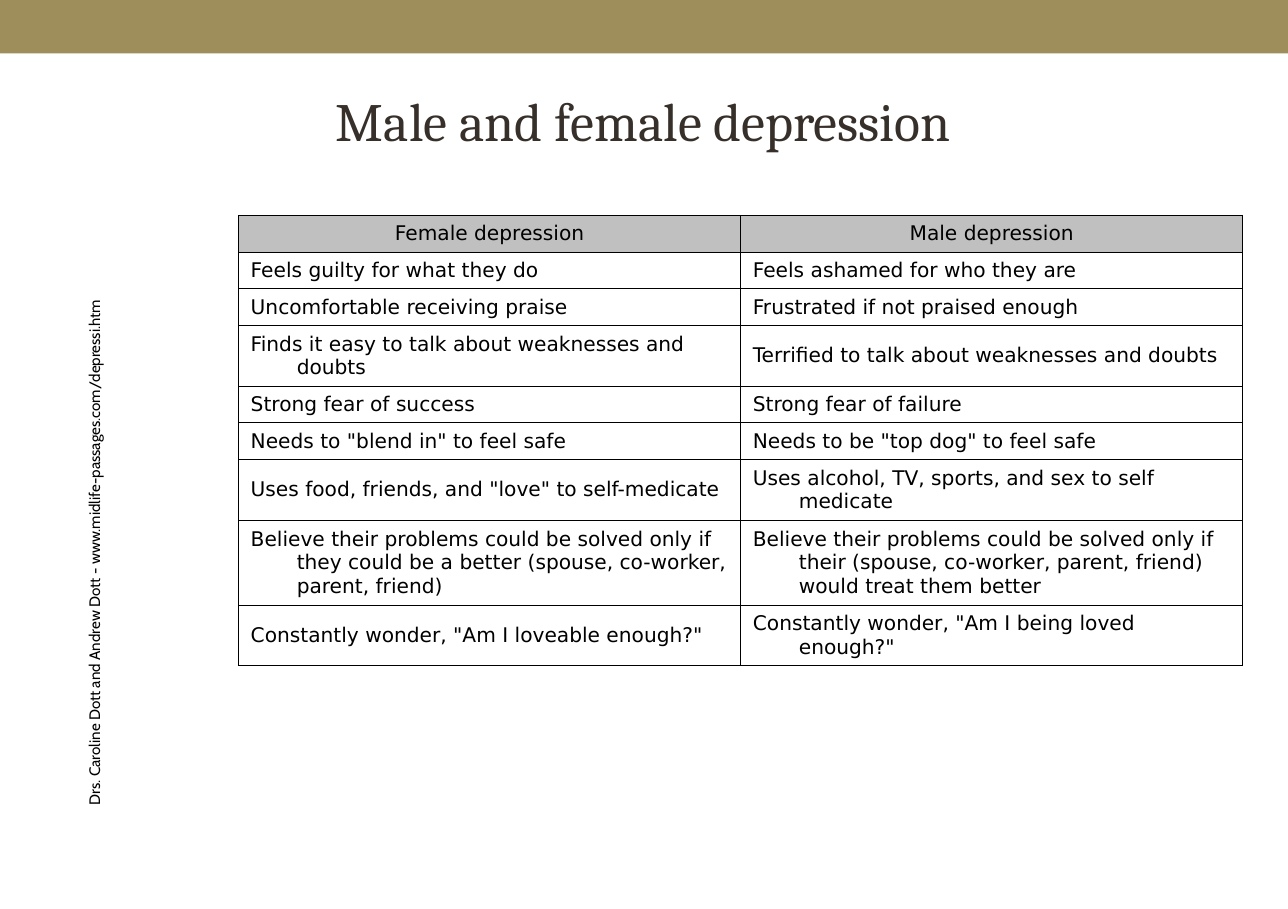
from lxml import etree
from pptx import Presentation
from pptx.dml.color import RGBColor
from pptx.enum.shapes import MSO_SHAPE
from pptx.enum.text import MSO_ANCHOR, PP_ALIGN
from pptx.oxml.ns import qn
from pptx.util import Pt

RECTANGLE = MSO_SHAPE.RECTANGLE
MIDDLE, TOP = MSO_ANCHOR.MIDDLE, MSO_ANCHOR.TOP
LEFT, CENTER = PP_ALIGN.LEFT, PP_ALIGN.CENTER

OLIVE = RGBColor(0x9E, 0x8E, 0x5C)
BROWN = RGBColor(0x37, 0x30, 0x2A)
BLACK = RGBColor(0, 0, 0)
SILVER = RGBColor(0xC0, 0xC0, 0xC0)

PAGE_WIDTH, PAGE_HEIGHT = 765.36, 540
TITLE_FORMAT = {"name": "Cambria", "size": Pt(32), "color": BROWN}
CELL_FORMAT = {"name": "DejaVu Sans", "size": Pt(12), "color": BLACK}
SOURCE_FORMAT = {"name": "Cabin", "size": Pt(9), "color": BLACK}

HANGING_INDENT = Pt(27.36)
BORDER_WIDTH = Pt(0.75)
ONE_LINE_ROW, EXTRA_LINE = 21.8, 14.2

# Each row: female side, male side, number of text lines it needs
COMPARISON = [
    ("Female depression", "Male depression", 1),
    ("Feels guilty for what they do", "Feels ashamed for who they are", 1),
    ("Uncomfortable receiving praise", "Frustrated if not praised enough", 1),
    ("Finds it easy to talk about weaknesses and doubts",
     "Terrified to talk about weaknesses and doubts", 2),
    ("Strong fear of success", "Strong fear of failure", 1),
    ('Needs to "blend in" to feel safe', 'Needs to be "top dog" to feel safe', 1),
    ('Uses food, friends, and "love" to self-medicate',
     "Uses alcohol, TV, sports, and sex to self medicate", 2),
    ("Believe their problems could be solved only if they could be a better "
     "(spouse, co-worker, parent, friend)",
     "Believe their problems could be solved only if their "
     "(spouse, co-worker, parent, friend) would treat them better", 3),
    ('Constantly wonder, "Am I loveable enough?"',
     'Constantly wonder, "Am I being loved enough?"', 2),
]


def write(para, text, text_format, alignment):
    para.alignment = alignment
    span = para.add_run()
    span.text = text
    for attribute, value in text_format.items():
        if attribute == "color":
            span.font.color.rgb = value
        else:
            setattr(span.font, attribute, value)


def add_text(page, box, text, text_format, alignment, anchor):
    shape = page.shapes.add_textbox(*map(Pt, box))
    shape.text_frame.word_wrap = True
    shape.text_frame.vertical_anchor = anchor
    write(shape.text_frame.paragraphs[0], text, text_format, alignment)
    return shape


def add_band(page, box):
    band = page.shapes.add_shape(RECTANGLE, *map(Pt, box))
    band.shadow.inherit = False
    band.fill.solid()
    band.fill.fore_color.rgb = OLIVE
    band.line.fill.background()


def add_source(page, box):
    """Write the source upwards, filling the given tall box."""
    left, top, width, height = box
    turned_box = (left + (width - height) / 2, top + (height - width) / 2, height, width)
    source = add_text(
        page, turned_box,
        "Drs. Caroline Dott and Andrew Dott - www.midlife-passages.com/depressi.htm",
        SOURCE_FORMAT, LEFT, TOP)
    source.rotation = 270


def add_borders(cell):
    properties = cell._tc.get_or_add_tcPr()
    for position, side in enumerate(("lnL", "lnR", "lnT", "lnB")):
        line = etree.Element(qn(f"a:{side}"), w=str(BORDER_WIDTH))
        fill = etree.SubElement(line, qn("a:solidFill"))
        etree.SubElement(fill, qn("a:srgbClr"), val=str(BLACK))
        properties.insert(position, line)


def fill_cell(cell, text, is_header):
    cell.vertical_anchor = MIDDLE
    if is_header:
        cell.fill.solid()
        cell.fill.fore_color.rgb = SILVER
    else:
        cell.fill.background()
    add_borders(cell)
    para = cell.text_frame.paragraphs[0]
    write(para, text, CELL_FORMAT, CENTER if is_header else LEFT)
    indents = para._p.get_or_add_pPr()
    indents.set("marL", str(HANGING_INDENT))
    indents.set("indent", str(-HANGING_INDENT))


def add_comparison(page, left, top, width):
    heights = [ONE_LINE_ROW + EXTRA_LINE * (lines - 1) for *_, lines in COMPARISON]
    table = page.shapes.add_table(
        len(COMPARISON), 2, Pt(left), Pt(top), Pt(width), Pt(sum(heights))).table
    table.first_row = table.horz_banding = False
    for column in table.columns:
        column.width = Pt(width / 2)
    for row_number, (*texts, _) in enumerate(COMPARISON):
        table.rows[row_number].height = Pt(heights[row_number])
        for column_number, text in enumerate(texts):
            fill_cell(table.cell(row_number, column_number), text, row_number == 0)


def main():
    deck = Presentation()
    deck.slide_width, deck.slide_height = Pt(PAGE_WIDTH), Pt(PAGE_HEIGHT)
    page = deck.slides.add_slide(deck.slide_layouts[6])
    add_band(page, (0, 0, PAGE_WIDTH, 31.7))
    add_text(page, (38, 26, 689, 91), "Male and female depression",
             TITLE_FORMAT, CENTER, MIDDLE)
    add_comparison(page, 141.8, 128, 596.8)
    add_source(page, (47, 128.5, 18, 357))
    deck.save("out.pptx")


if __name__ == "__main__":
    main()
